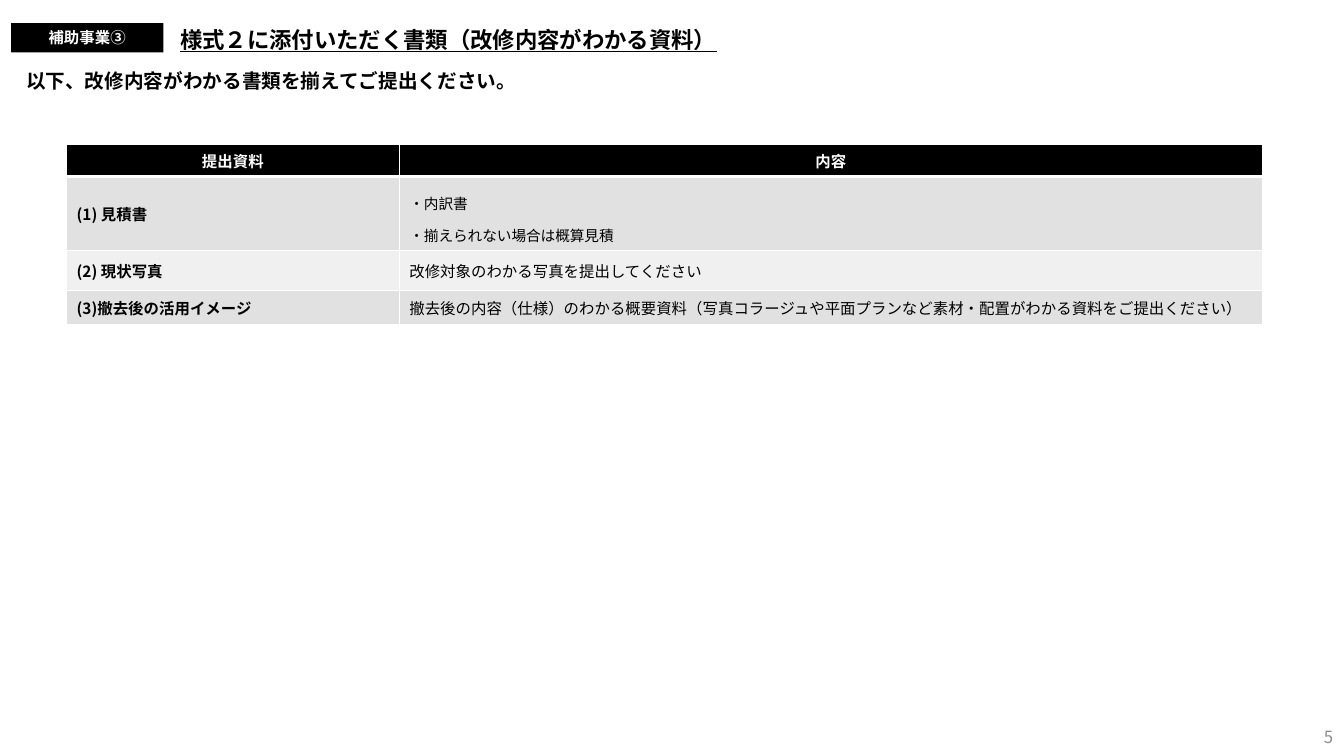
from lxml.etree import SubElement
from pptx import Presentation
from pptx.dml.color import RGBColor
from pptx.enum.shapes import MSO_SHAPE
from pptx.enum.text import MSO_ANCHOR, PP_ALIGN
from pptx.oxml import parse_xml
from pptx.oxml.ns import nsdecls, qn
from pptx.util import Inches, Pt

FONT = "Noto Sans CJK JP"
BLACK = RGBColor(0x00, 0x00, 0x00)
WHITE = RGBColor(0xFF, 0xFF, 0xFF)
GRAY = RGBColor(0x8C, 0x8C, 0x8C)
DARK_BAND = RGBColor(0xE1, 0xE1, 0xE1)
LIGHT_BAND = RGBColor(0xF0, 0xF0, 0xF0)

COLUMN_WIDTHS = [3.3, 8.56]
ROW_HEIGHTS = [0.26, 0.69, 0.4, 0.34]
HEADINGS = ["提出資料", "内容"]
# Document, lines of its description, and format of the description
DOCUMENTS = [
    ("(1) 見積書", ["・内訳書", "・揃えられない場合は概算見積"],
     {"size": 10.5, "spacing": 1.5}),
    ("(2) 現状写真", ["改修対象のわかる写真を提出してください"], {}),
    ("(3)撤去後の活用イメージ",
     ["撤去後の内容（仕様）のわかる概要資料（写真コラージュや平面プランなど"
      "素材・配置がわかる資料をご提出ください）"], {}),
]


def write_text(frame, lines, size=11, color=BLACK, align=PP_ALIGN.LEFT,
               spacing=None, bold=False, underline=False):
    font_format = {"size": Pt(size), "name": FONT, "bold": bold,
                   "underline": underline}
    for index, line in enumerate(lines):
        paragraph = frame.add_paragraph() if index else frame.paragraphs[0]
        paragraph.alignment = align
        if spacing:
            paragraph.line_spacing = spacing
        run = paragraph.add_run()
        run.text = line
        for name, value in font_format.items():
            setattr(run.font, name, value)
        run.font.color.rgb = color
        # Japanese glyphs take the East Asian font
        SubElement(run._r.get_or_add_rPr(), qn("a:ea"), typeface=FONT)


def add_text(slide, text, left, top, width, height,
             anchor=MSO_ANCHOR.TOP, **text_format):
    box = slide.shapes.add_textbox(
        Inches(left), Inches(top), Inches(width), Inches(height))
    box.text_frame.word_wrap = True
    box.text_frame.vertical_anchor = anchor
    write_text(box.text_frame, [text], **text_format)


def add_label(slide, text, left, top, width, height):
    shape = slide.shapes.add_shape(
        MSO_SHAPE.RECTANGLE,
        Inches(left), Inches(top), Inches(width), Inches(height))
    shape.shadow.inherit = False
    shape.fill.solid()
    shape.fill.fore_color.rgb = BLACK
    shape.line.fill.background()
    shape.text_frame.vertical_anchor = MSO_ANCHOR.MIDDLE
    write_text(shape.text_frame, [text], color=WHITE, align=PP_ALIGN.CENTER,
               bold=True)


def set_borders(cell, top, bottom):
    widths = {"lnL": 1, "lnR": 1, "lnT": top, "lnB": bottom}
    properties = cell._tc.get_or_add_tcPr()
    for index, (side, width) in enumerate(widths.items()):
        properties.insert(index, parse_xml(
            f'<a:{side} {nsdecls("a")} w="{Pt(width)}"><a:solidFill>'
            f'<a:srgbClr val="{WHITE}"/></a:solidFill></a:{side}>'))


def fill_cell(cell, lines, fill, top=1, bottom=1, **text_format):
    cell.fill.solid()
    cell.fill.fore_color.rgb = fill
    cell.vertical_anchor = MSO_ANCHOR.MIDDLE
    set_borders(cell, top, bottom)
    write_text(cell.text_frame, lines, **text_format)


def add_document_table(slide, left, top):
    table = slide.shapes.add_table(
        len(ROW_HEIGHTS), len(COLUMN_WIDTHS), Inches(left), Inches(top),
        Inches(sum(COLUMN_WIDTHS)), Inches(sum(ROW_HEIGHTS))).table
    for column, width in zip(table.columns, COLUMN_WIDTHS):
        column.width = Inches(width)
    for row, height in zip(table.rows, ROW_HEIGHTS):
        row.height = Inches(height)

    # Header row, with a thick rule below it
    for column, heading in enumerate(HEADINGS):
        fill_cell(table.cell(0, column), [heading], BLACK, bottom=3,
                  color=WHITE, align=PP_ALIGN.CENTER, bold=True)

    # Banded document rows
    for row, (document, lines, text_format) in enumerate(DOCUMENTS, start=1):
        band = DARK_BAND if row % 2 else LIGHT_BAND
        rule = 3 if row == 1 else 1
        fill_cell(table.cell(row, 0), [document], band, top=rule, bold=True)
        fill_cell(table.cell(row, 1), lines, band, top=rule, **text_format)


def main():
    presentation = Presentation()
    presentation.slide_width = Inches(13.33)
    presentation.slide_height = Inches(7.5)
    slide = presentation.slides.add_slide(presentation.slide_layouts[6])

    # Required documents
    add_document_table(slide, 0.66, 1.43)

    # Title line and lead
    add_text(slide, "様式２に添付いただく書類（改修内容がわかる資料）",
             1.69, 0.21, 10.92, 0.37, size=16, bold=True, underline=True)
    add_label(slide, "補助事業③", 0.11, 0.23, 1.51, 0.29)
    add_text(slide, "以下、改修内容がわかる書類を揃えてご提出ください。",
             0.16, 0.63, 6.5, 0.34, size=14, bold=True)

    # Page number
    add_text(slide, "5", 10.32, 7.11, 3, 0.4, anchor=MSO_ANCHOR.MIDDLE,
             size=12, color=GRAY, align=PP_ALIGN.RIGHT)

    presentation.save("out.pptx")


if __name__ == "__main__":
    main()
